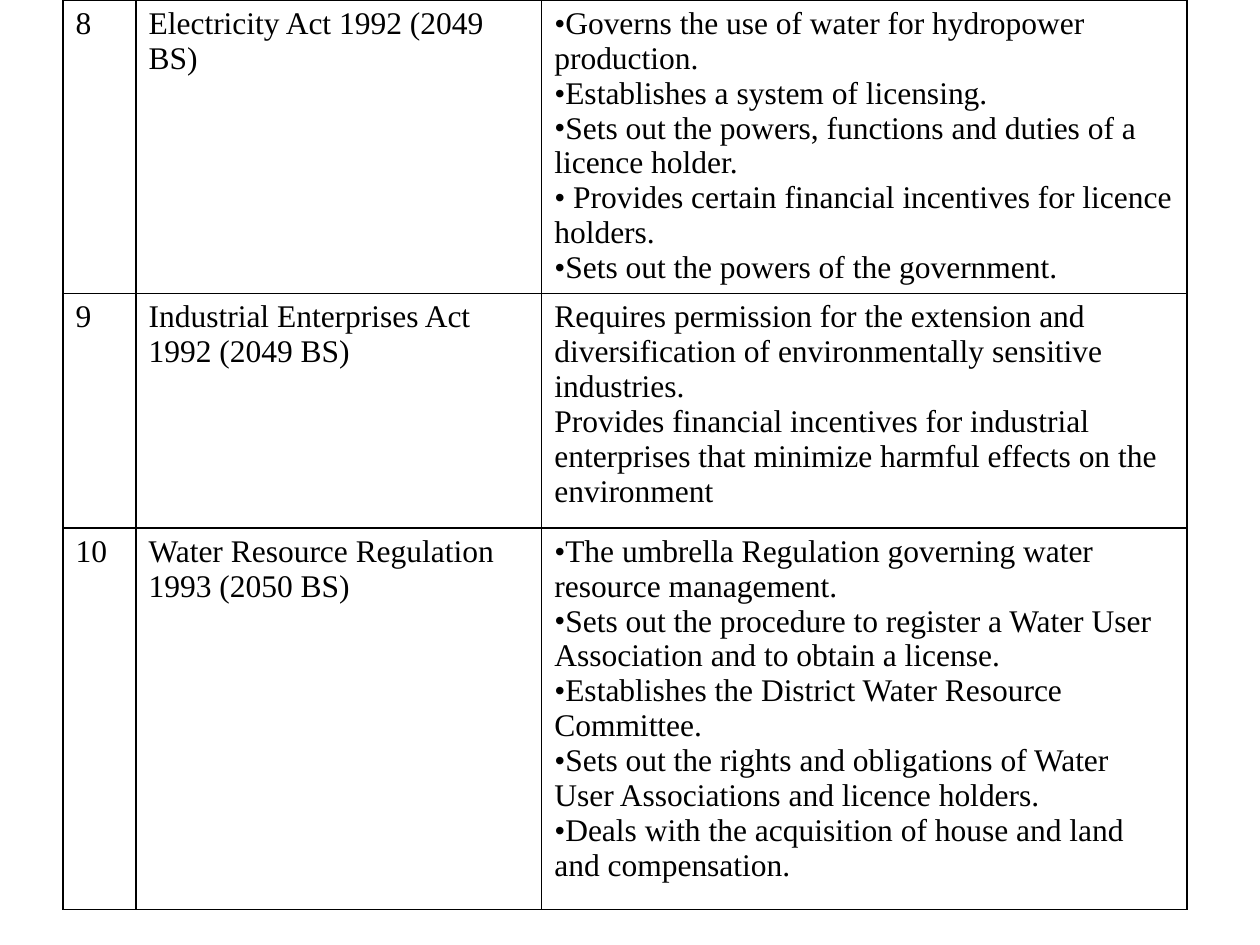
from lxml import etree
from pptx import Presentation
from pptx.dml.color import RGBColor
from pptx.oxml.ns import qn
from pptx.util import Inches, Pt

COLOURS = {"text": "000000", "border": "000000"}
FONT, FONT_SIZE = "Times New Roman", Pt(18)
BORDER_WIDTH = Pt(1)
BLANK_LAYOUT = 6

LEFT, TOP = 0.5, 0
COLUMN_WIDTHS = [0.58, 3.22, 5.12]

# Each act: number, title, row height, bulleted, provisions
ACTS = [
    ("8", "Electricity Act 1992 (2049 BS)", 2.33, True, [
        "Governs the use of water for hydropower production.",
        "Establishes a system of licensing.",
        "Sets out the powers, functions and duties of a licence holder.",
        " Provides certain financial incentives for licence holders.",
        "Sets out the powers of the government.",
    ]),
    ("9", "Industrial Enterprises Act 1992 (2049 BS)", 1.86, False, [
        "Requires permission for the extension and diversification of "
        "environmentally sensitive industries.",
        "Provides financial incentives for industrial enterprises that "
        "minimize harmful effects on the environment",
    ]),
    ("10", "Water Resource Regulation 1993 (2050 BS)", 3.03, True, [
        "The umbrella Regulation governing water resource management.",
        "Sets out the procedure to register a Water User Association and "
        "to obtain a license.",
        "Establishes the District Water Resource Committee.",
        "Sets out the rights and obligations of Water User Associations "
        "and licence holders.",
        "Deals with the acquisition of house and land and compensation.",
    ]),
]


def add_borders(cell):
    properties = cell._tc.get_or_add_tcPr()
    # Border lines must come before the fill in the cell properties
    for index, side in enumerate(("a:lnL", "a:lnR", "a:lnT", "a:lnB")):
        line = etree.Element(qn(side), w=str(BORDER_WIDTH))
        fill = etree.SubElement(line, qn("a:solidFill"))
        etree.SubElement(fill, qn("a:srgbClr"), val=COLOURS["border"])
        properties.insert(index, line)


def add_bullet(paragraph):
    properties = paragraph._p.get_or_add_pPr()
    etree.SubElement(properties, qn("a:buFont"), typeface=FONT)
    etree.SubElement(properties, qn("a:buChar"), char="•")


def fill_cell(cell, lines, bulleted=False):
    cell.fill.background()
    add_borders(cell)
    cell.text_frame.text = "\n".join(lines)
    for paragraph in cell.text_frame.paragraphs:
        if bulleted:
            add_bullet(paragraph)
        for run in paragraph.runs:
            run.font.name = FONT
            run.font.size = FONT_SIZE
            run.font.color.rgb = RGBColor.from_string(COLOURS["text"])


def main():
    presentation = Presentation()
    presentation.slide_width, presentation.slide_height = Inches(10), Inches(7.5)
    slide = presentation.slides.add_slide(presentation.slide_layouts[BLANK_LAYOUT])

    table_height = sum(act[2] for act in ACTS)
    table = slide.shapes.add_table(
        len(ACTS), len(COLUMN_WIDTHS), Inches(LEFT), Inches(TOP),
        Inches(sum(COLUMN_WIDTHS)), Inches(table_height)).table
    table.first_row = table.horz_banding = False
    for column, width in zip(table.columns, COLUMN_WIDTHS):
        column.width = Inches(width)

    for row, (number, title, height, bulleted, provisions) in zip(table.rows, ACTS):
        row.height = Inches(height)
        number_cell, title_cell, provisions_cell = row.cells
        fill_cell(number_cell, [number])
        fill_cell(title_cell, [title])
        fill_cell(provisions_cell, provisions, bulleted)

    presentation.save("out.pptx")


if __name__ == "__main__":
    main()
